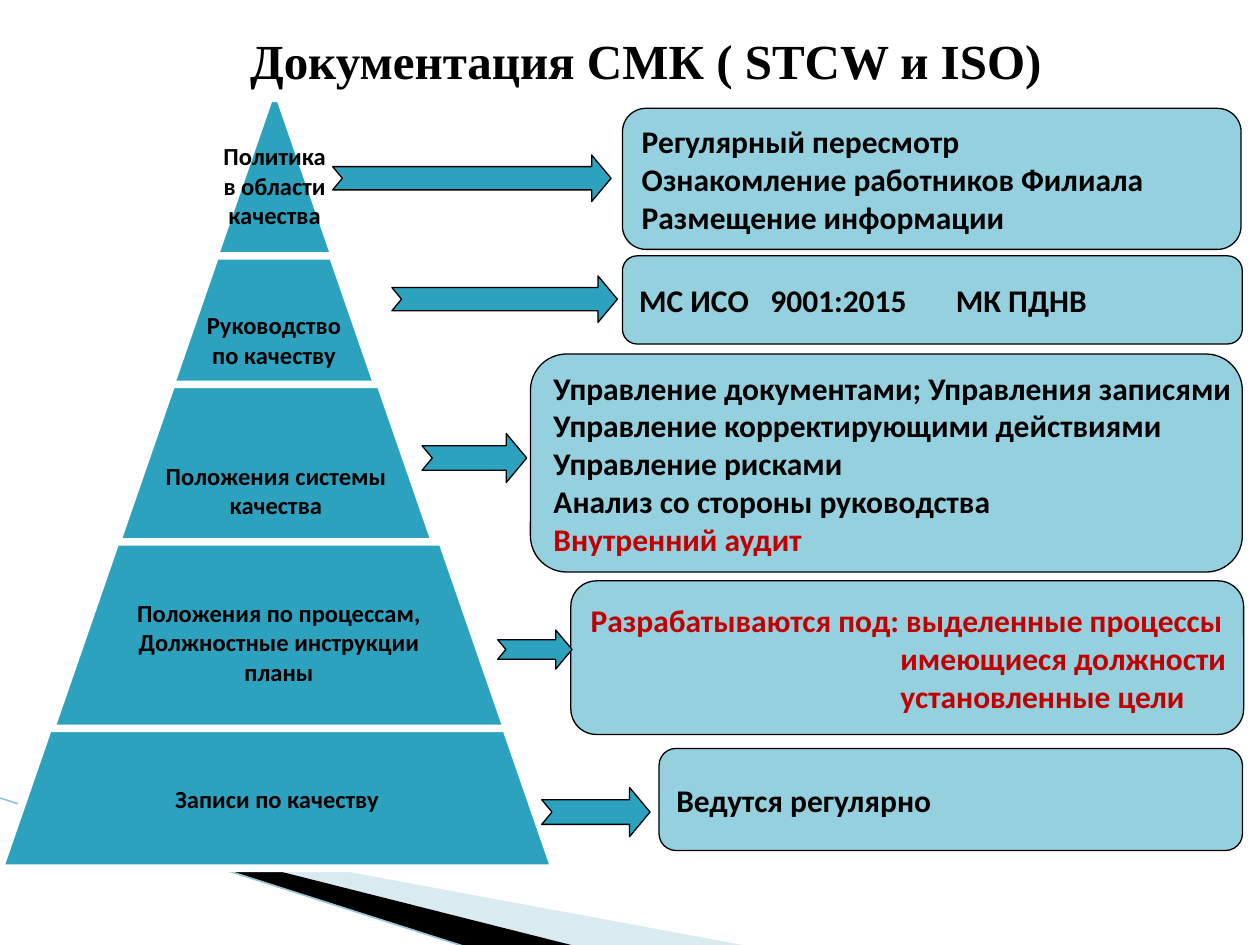
"""Build the quality documentation pyramid slide."""
from dataclasses import dataclass
from typing import Optional

from lxml.etree import SubElement
from pptx import Presentation
from pptx.dml.color import RGBColor
from pptx.enum.shapes import MSO_CONNECTOR as Connector, MSO_SHAPE as Shape
from pptx.enum.text import MSO_ANCHOR as Anchor, MSO_AUTO_SIZE as AutoSize, PP_ALIGN as Align
from pptx.oxml.ns import qn
from pptx.util import Pt

BLACK = RGBColor(0x00, 0x00, 0x00)
WHITE = RGBColor(0xFF, 0xFF, 0xFF)
RED = RGBColor(0xC0, 0x00, 0x00)
TEAL = RGBColor(0x2D, 0xA2, 0xBF)
PALE = RGBColor(0xA0, 0xCB, 0xDC)
LINE_BLUE = RGBColor(0x97, 0xC5, 0xD8)


@dataclass
class Area:
    left: float
    top: float
    width: float
    height: float

    def lengths(self) -> tuple:
        return tuple(Pt(v) for v in (self.left, self.top, self.width, self.height))


@dataclass
class Tier:
    area: Area
    label_width: float
    lines: list[str]
    slope: float = 0.346


@dataclass
class Line:
    text: str
    color: RGBColor = BLACK
    indent: float = 0
    tabs: tuple = ()
    align: Optional[Align] = None


@dataclass
class Note:
    area: Area
    lines: list[Line]
    arrow: Area


TIERS = [
    Tier(Area(119.5, 56.2, 74.9, 99.4), 74.9, ["Политика", "в области", "качества"], 0.459),
    Tier(Area(90, 146.2, 133.2, 95.8), 86.4, ["Руководство", "по качеству"]),
    Tier(Area(56.2, 219.6, 203, 121), 131.8, ["Положения системы качества"]),
    Tier(Area(26.6, 309.6, 265.7, 114.5), 172.8,
         ["Положения по процессам,", "Должностные инструкции", "планы"]),
    Tier(Area(0, 416.2, 316.8, 79.9), 205.9, ["Записи по качеству"]),
]

NOTES = [
    Note(Area(355.7, 61.9, 353.5, 80.6),
         [Line("Регулярный пересмотр"), Line("Ознакомление работников Филиала"),
          Line("Размещение информации")],
         Area(190.1, 88.6, 159.1, 26.6)),
    Note(Area(355.7, 146.2, 354.2, 50.4),
         [Line("МС ИСО\t9001:2015\tМК ПДНВ", tabs=(75, 181))],
         Area(223.9, 157.7, 128.9, 26.6)),
    Note(Area(303.1, 202.3, 406.8, 124.6),
         [Line("Управление документами; Управления записями"),
          Line("Управление корректирующими действиями"), Line("Управление рисками"),
          Line("Анализ со стороны руководства"), Line("Внутренний аудит", RED)],
         Area(241.2, 247.7, 59.8, 28.1)),
    Note(Area(326.2, 331.9, 384.5, 87.8),
         [Line("Разрабатываются под: выделенные процессы", RED, align=Align.JUSTIFY),
          Line("имеющиеся должности", RED, 177, align=Align.JUSTIFY),
          Line("установленные цели", RED, 177, align=Align.JUSTIFY)],
         Area(284.4, 360, 42.5, 22.3)),
    Note(Area(376.6, 427.7, 333.4, 58.3), [Line("Ведутся регулярно")],
         Area(309.6, 450, 61.9, 28.1)),
]


def set_alpha(shape, percent: int) -> None:
    color = shape.fill._xPr.find(qn("a:solidFill"))[0]
    SubElement(color, qn("a:alpha"), val=str(percent * 1000))


def paint(shape, fill: RGBColor, line: Optional[RGBColor] = None,
          weight: float = 0.75, alpha: int = 100) -> None:
    shape.shadow.inherit = False
    shape.fill.solid()
    shape.fill.fore_color.rgb = fill
    if alpha < 100:
        set_alpha(shape, alpha)
    if line is None:
        shape.line.fill.background()
    else:
        shape.line.color.rgb = line
        shape.line.width = Pt(weight)


def add_span(para, text: str, size: float, color: RGBColor, font: str = "Calibri") -> None:
    span = para.add_run()
    span.text = text
    span.font.name = font
    span.font.size = Pt(size)
    span.font.bold = True
    span.font.color.rgb = color


def write_lines(frame, lines: list[Line], size: float, align: Align) -> None:
    for index, line in enumerate(lines):
        para = frame.add_paragraph() if index else frame.paragraphs[0]
        para.alignment = line.align or align
        props = para._p.get_or_add_pPr()
        if line.indent:
            props.set("marL", str(Pt(line.indent)))
        if line.tabs:
            stops = SubElement(props, qn("a:tabLst"))
            for stop in line.tabs:
                SubElement(stops, qn("a:tab"), pos=str(Pt(stop)), algn="l")
        add_span(para, line.text, size, line.color)


def add_swoosh(page, points: list[tuple], fill: RGBColor, alpha: int = 100) -> None:
    corners = [(Pt(x), Pt(y)) for x, y in points]
    builder = page.shapes.build_freeform(*corners[0], scale=1.0)
    builder.add_line_segments(corners[1:], close=True)
    paint(builder.convert_to_shape(), fill, alpha=alpha)


def add_backdrop(page) -> None:
    add_swoosh(page, [(39.6, 468.7), (428.4, 540.7), (328.3, 540.7), (39.6, 468)], PALE, 40)
    add_swoosh(page, [(38.2, 467.3), (329, 540.7), (267.8, 541.4), (38.9, 468)], BLACK)
    edge = page.shapes.add_connector(
        Connector.STRAIGHT, Pt(-0.7), Pt(455.8), Pt(267.1), Pt(541.4))
    edge.line.color.rgb = LINE_BLUE
    edge.line.width = Pt(0.95)
    SubElement(edge._element.spPr, qn("a:effectLst"))


def add_title(page, text: str) -> None:
    title = page.shapes.title
    title.left, title.top, title.width, title.height = Area(26, 0, 686, 68).lengths()
    frame = title.text_frame
    frame.auto_size = AutoSize.NONE
    frame.vertical_anchor = Anchor.MIDDLE
    para = frame.paragraphs[0]
    para.alignment = Align.CENTER
    add_span(para, text, 28, BLACK, "Times New Roman")


def add_tier(page, tier: Tier) -> None:
    area = tier.area
    block = page.shapes.add_shape(Shape.TRAPEZOID, *area.lengths())
    block.adjustments[0] = tier.slope
    paint(block, TEAL, WHITE, 4.33)
    left = area.left + (area.width - tier.label_width) / 2
    box = page.shapes.add_textbox(
        *Area(left, area.top, tier.label_width, area.height).lengths())
    frame = box.text_frame
    frame.word_wrap = True
    frame.vertical_anchor = Anchor.MIDDLE
    frame.margin_left = frame.margin_right = Pt(1.4)
    frame.margin_top = frame.margin_bottom = Pt(1.4)
    write_lines(frame, [Line(text) for text in tier.lines], 14, Align.CENTER)


def add_note(page, note: Note) -> None:
    box = page.shapes.add_shape(Shape.ROUNDED_RECTANGLE, *note.area.lengths())
    paint(box, TEAL, BLACK, alpha=50)
    box.text_frame.word_wrap = False
    box.text_frame.vertical_anchor = Anchor.MIDDLE
    write_lines(box.text_frame, note.lines, 18, Align.LEFT)


def add_arrow(page, area: Area) -> None:
    arrow = page.shapes.add_shape(Shape.NOTCHED_RIGHT_ARROW, *area.lengths())
    arrow.adjustments[0] = 0.5
    arrow.adjustments[1] = 0.417
    paint(arrow, TEAL, BLACK)


def main() -> None:
    deck = Presentation()
    deck.slide_width, deck.slide_height = Pt(720), Pt(540)
    page = deck.slides.add_slide(deck.slide_layouts[5])
    add_backdrop(page)
    add_title(page, "Документация СМК ( STCW и ISO)")
    for tier in TIERS:
        add_tier(page, tier)
    for note in NOTES:
        add_note(page, note)
    for note in NOTES:
        add_arrow(page, note.arrow)
    deck.save("out.pptx")


if __name__ == "__main__":
    main()
